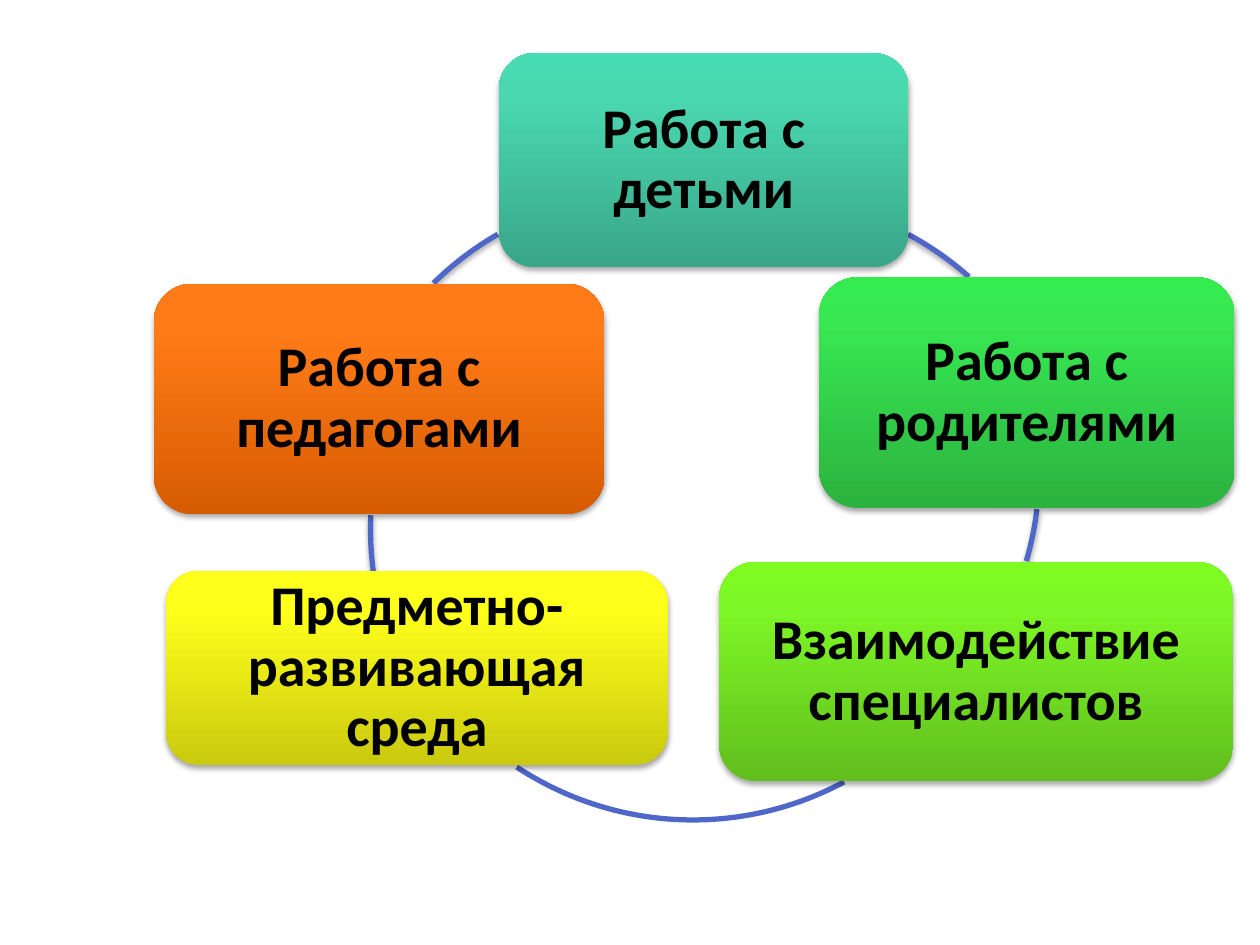
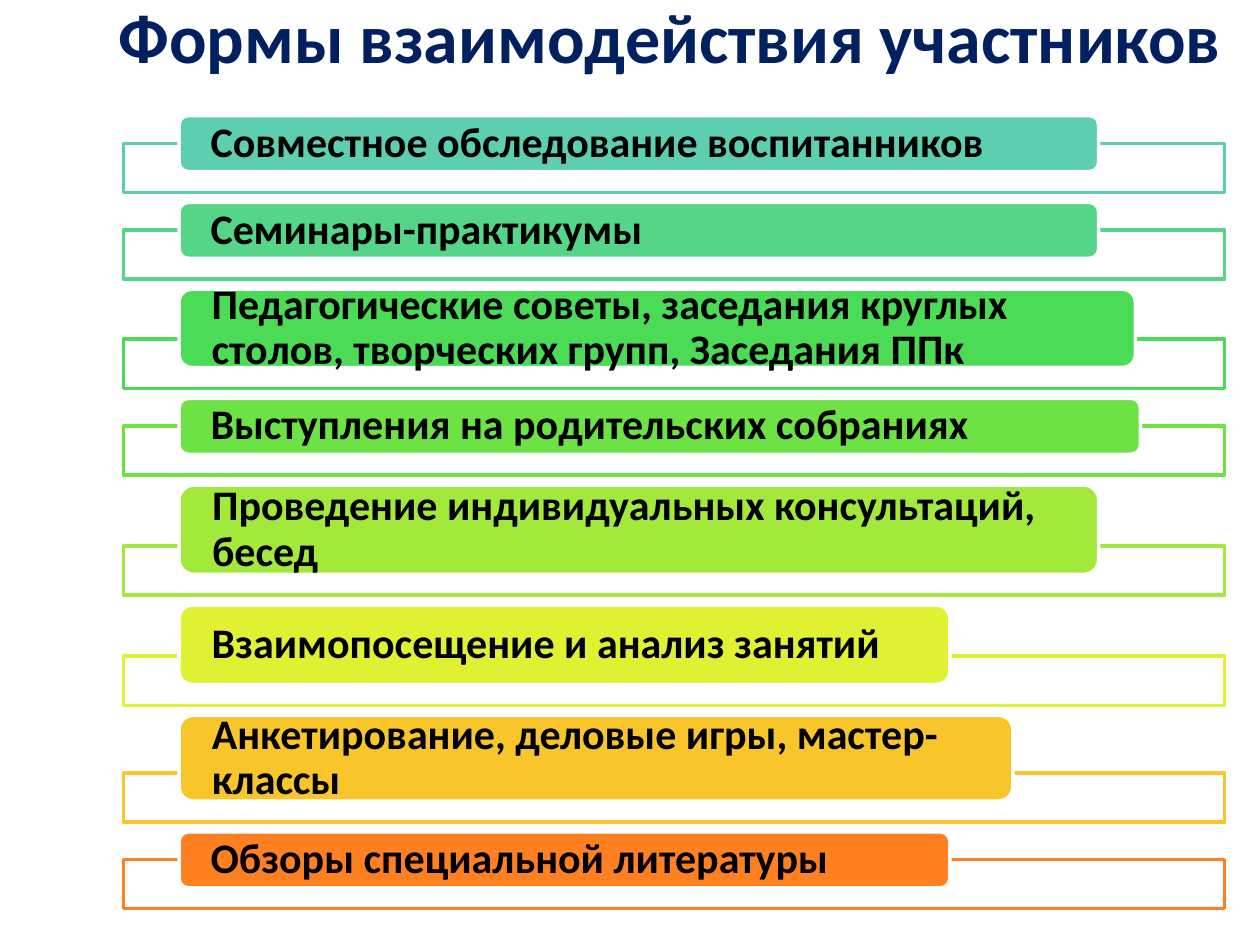
from copy import deepcopy
from dataclasses import dataclass

from lxml import etree
from pptx import Presentation
from pptx import util as u
from pptx.dml.color import RGBColor
from pptx.enum import shapes, text
from pptx.oxml.ns import qn


@dataclass(frozen=True)
class Theme:
    font: str = "Calibri"
    ink: str = "000000"
    title: str = "002060"
    paper: str = "FFFFFF"
    ring: str = "4E67C8"
    title_size: int = 40
    card_size: int = 32
    bar_size: int = 24
    ring_width: int = 3
    bar_line: int = 2


THEME = Theme()
ROUNDED = shapes.MSO_SHAPE.ROUNDED_RECTANGLE
STOPS = (0, 0.8, 1)

CARDS = [
    ("Работа с детьми", (10.06, 1.07, 8.26, 4.32), ("39A688", "4AD8B1", "47DCB3")),
    ("Работа с родителями", (16.51, 5.59, 8.38, 4.65), ("2BB23F", "38E752", "35EC50")),
    ("Взаимодействие специалистов", (14.5, 11.33, 10.36, 4.42), ("61BE1D", "7EF726", "7EFC22")),
    ("Предметно-развивающая среда", (3.35, 11.51, 10.11, 3.91), ("CACA0E", "FEFF1B", "FEFF1C")),
    ("Работа с педагогами", (3.1, 5.72, 9.09, 4.65), ("D75C00", "FF7B18", "FF7C19")),
]

RING_SIZE = 12.9
RING_ARCS = [
    ((8.81, 3.96), (298.2, 311.5), True),
    ((8.05, 3.05), (6.8, 16.3), True),
    ((7.52, 3.63), (61.8, 123.4), False),
    ((7.47, 4.22), (172.5, 182.5), True),
    ((6.81, 3.86), (225.5, 240), True),
]

FORMS_TITLE = "Формы взаимодействия участников"
FORMS = [
    ("Совместное обследование воспитанников", 18.54, 1.13, "5DCEAF"),
    ("Семинары-практикумы", 18.54, 1.13, "55D588"),
    ("Педагогические советы, заседания круглых столов, творческих групп, Заседания ППк",
     19.28, 1.58, "4CDB56"),
    ("Выступления на родительских собраниях", 19.38, 1.13, "6DE244"),
    ("Проведение индивидуальных консультаций, бесед", 18.54, 1.8, "A2E93B"),
    ("Взаимопосещение и анализ занятий", 15.54, 1.6, "E0F033"),
    ("Анкетирование, деловые игры, мастер-классы", 16.81, 1.73, "F8C62A"),
    ("Обзоры специальной литературы", 15.54, 1.13, "FF8021"),
]
FORMS_TOP, BAR_LEFT = 2.33, 3.61
FRAME_LEFT, FRAME_WIDTH, FRAME_HEIGHT = 2.49, 22.2, 0.99
BAR_OVERLAP, FORM_GAP = 0.57, 0.2


def color(code):
    return RGBColor.from_string(code)


def apply(target, values):
    for name, value in values.items():
        setattr(target, name, value)


def add_shape(page, preset, place, fill=None, line=None, width=0):
    shape = page.shapes.add_shape(preset, *map(u.Cm, place))
    shape.shadow.inherit = False
    if fill:
        shape.fill.solid()
        shape.fill.fore_color.rgb = color(fill)
    else:
        shape.fill.background()
    if line:
        shape.line.color.rgb = color(line)
        shape.line.width = u.Pt(width)
    else:
        shape.line.fill.background()
    return shape


def write(shape, words, size, ink, align, inset, spacing=0.9):
    frame = shape.text_frame
    side, edge = map(u.Cm, inset)
    apply(frame, dict(word_wrap=True, auto_size=text.MSO_AUTO_SIZE.NONE,
                      vertical_anchor=text.MSO_ANCHOR.MIDDLE,
                      margin_left=side, margin_right=side,
                      margin_top=edge, margin_bottom=edge))
    para = frame.paragraphs[0]
    apply(para, dict(alignment=align, line_spacing=spacing))
    span = para.add_run()
    span.text = words
    apply(span.font, dict(name=THEME.font, size=u.Pt(size), bold=True))
    span.font.color.rgb = color(ink)


def add_shadow(shape):
    effects = shape._element.spPr.find(qn("a:effectLst"))
    shadow = etree.SubElement(effects, qn("a:outerShdw"), blurRad="40000",
                              dist="23000", dir="5400000", rotWithShape="0")
    tint = etree.SubElement(shadow, qn("a:srgbClr"), val="000000")
    etree.SubElement(tint, qn("a:alpha"), val="35000")


def fill_gradient(shape, codes):
    fill = shape.fill
    fill.gradient()
    fill.gradient_angle = 90
    stop_list = next(shape._element.spPr.iter(qn("a:gsLst")))
    stop_list.append(deepcopy(stop_list[0]))
    for stop, position, code in zip(fill.gradient_stops, STOPS, codes):
        stop.position = position
        stop.color.rgb = color(code)


def build_ring(page):
    for corner, angles, shaded in RING_ARCS:
        arc = add_shape(page, shapes.MSO_SHAPE.ARC, (*corner, RING_SIZE, RING_SIZE),
                        line=THEME.ring, width=THEME.ring_width)
        for index, angle in enumerate(angles):
            arc.adjustments[index] = angle * 0.6
        if shaded:
            add_shadow(arc)
    for words, place, codes in CARDS:
        card = add_shape(page, ROUNDED, place)
        fill_gradient(card, codes)
        add_shadow(card)
        write(card, words, THEME.card_size, THEME.ink, text.PP_ALIGN.CENTER, (0.33, 0.33))


def build_forms(page):
    title = page.shapes.title
    apply(title, dict(left=u.Cm(1.9), top=u.Cm(-0.08), width=u.Cm(23.2), height=u.Cm(1.6)))
    write(title, FORMS_TITLE, THEME.title_size, THEME.title, text.PP_ALIGN.CENTER,
          (0.25, 0.13), 1.0)
    top = FORMS_TOP
    for words, width, height, tone in FORMS:
        frame_top = top + height - BAR_OVERLAP
        add_shape(page, shapes.MSO_SHAPE.RECTANGLE,
                  (FRAME_LEFT, frame_top, FRAME_WIDTH, FRAME_HEIGHT),
                  THEME.paper, tone, THEME.bar_line)
        bar = add_shape(page, ROUNDED, (BAR_LEFT, top, width, height),
                        tone, THEME.paper, THEME.bar_line)
        write(bar, words, THEME.bar_size, THEME.ink, text.PP_ALIGN.LEFT, (0.58, 0))
        top = frame_top + FRAME_HEIGHT + FORM_GAP


def main():
    deck = Presentation()
    apply(deck, dict(slide_width=u.Cm(25.4), slide_height=u.Cm(19.05)))
    for layout, build in ((6, build_ring), (5, build_forms)):
        build(deck.slides.add_slide(deck.slide_layouts[layout]))
    deck.save("out.pptx")


if __name__ == "__main__":
    main()
